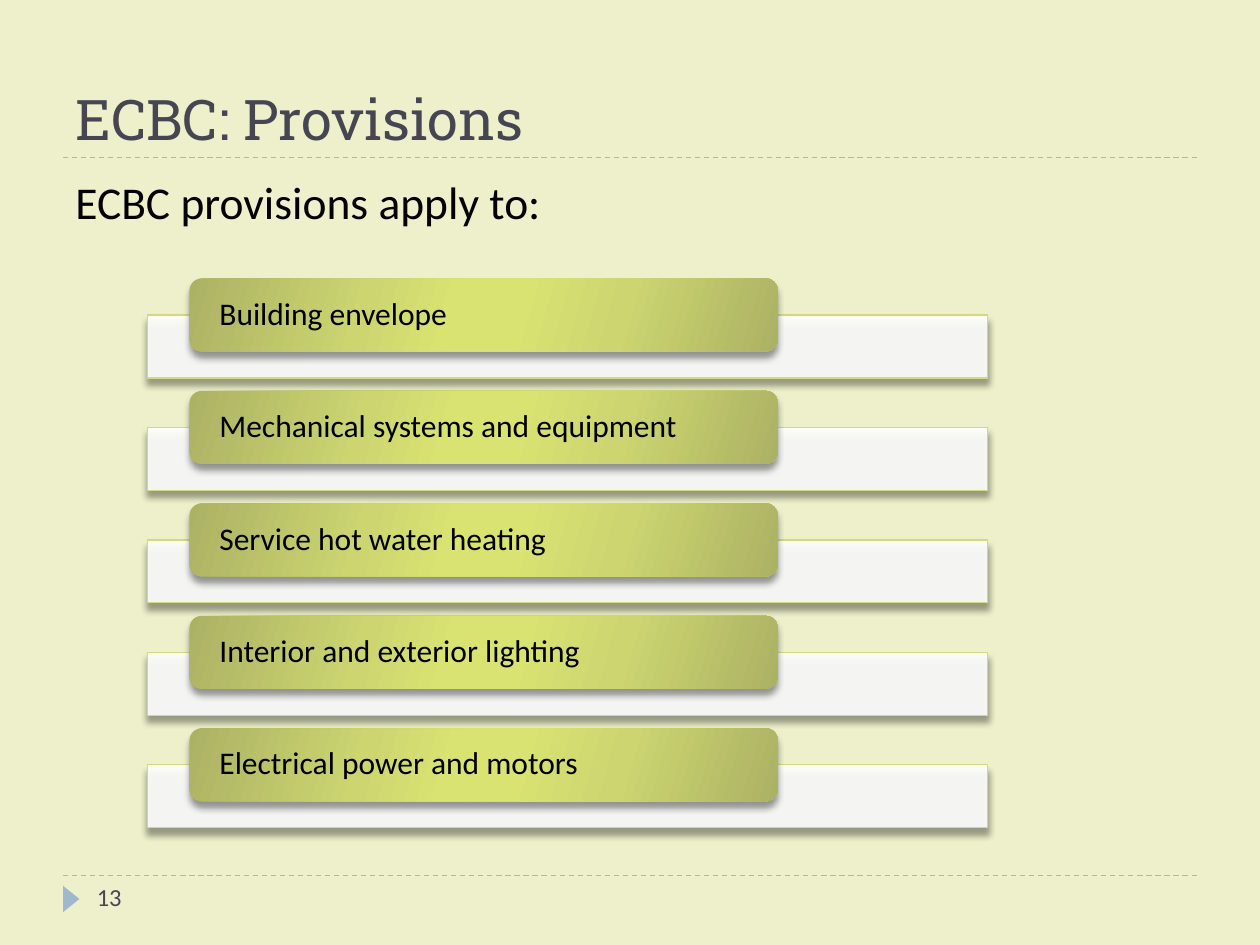
from lxml.etree import SubElement
from pptx import Presentation
from pptx.dml.color import RGBColor
from pptx.enum.dml import MSO_LINE
from pptx.enum.shapes import MSO_CONNECTOR, MSO_SHAPE
from pptx.enum.text import MSO_ANCHOR, PP_ALIGN
from pptx.oxml import parse_xml
from pptx.oxml.ns import nsdecls, qn
from pptx.util import Inches, Pt

COLORS = {
    "background": "EDF0CA", "rule": "9FB8CD", "heading": "464653",
    "text": "000000", "bar": "FFFFFF", "bar_line": "D2DA7A",
    "edge": "ACB264", "mid": "CCD570", "center": "D9E371",
}
PILL_STOPS = [(0, "edge"), (30, "mid"), (45, "center"),
              (55, "center"), (73, "mid"), (100, "edge")]
PROVISIONS = [
    "Building envelope",
    "Mechanical systems and equipment",
    "Service hot water heating",
    "Interior and exterior lighting",
    "Electrical power and motors",
]


def rgb(name):
    """Return the named colour."""
    return RGBColor.from_string(COLORS[name])


def set_text(sp, text, size, color, font="Calibri", anchor=MSO_ANCHOR.TOP):
    """Write one left-aligned paragraph into a shape."""
    tf = sp.text_frame
    tf.word_wrap = True
    tf.vertical_anchor = anchor
    p = tf.paragraphs[0]
    p.text = text
    p.alignment = PP_ALIGN.LEFT
    p.font.name = font
    p.font.size = Pt(size)
    p.font.color.rgb = rgb(color)
    return tf


def add_text(s, left, top, width, height, *args, **kwargs):
    """Add a text box, with its box in inches."""
    sp = s.shapes.add_textbox(Inches(left), Inches(top), Inches(width), Inches(height))
    return set_text(sp, *args, **kwargs)


def add_box(s, kind, left, top, width, height):
    """Add a preset shape without shadow, with its box in inches."""
    sp = s.shapes.add_shape(kind, Inches(left), Inches(top), Inches(width), Inches(height))
    sp.shadow.inherit = False
    return sp


def add_shadow(sp):
    """Give a shape a soft shadow straight below it."""
    effects = sp._element.spPr.find(qn("a:effectLst"))
    effects.append(parse_xml(
        f'<a:outerShdw {nsdecls("a")} blurRad="{Pt(4)}" dist="{Pt(3.4)}" dir="5400000" '
        'rotWithShape="0"><a:srgbClr val="000000"><a:alpha val="40000"/></a:srgbClr>'
        '</a:outerShdw>'))


def set_gradient(sp, stops, angle):
    """Fill a shape with a linear gradient."""
    sp.fill.gradient()
    grad = sp._element.spPr.find(qn("a:gradFill"))
    stop_list = grad.find(qn("a:gsLst"))
    for stop in list(stop_list):
        stop_list.remove(stop)
    for position, name in stops:
        stop = SubElement(stop_list, qn("a:gs"), pos=str(position * 1000))
        SubElement(stop, qn("a:srgbClr"), val=COLORS[name])
    grad.find(qn("a:lin")).set("ang", str(angle * 60000))


def add_rule(s, left, top, width):
    """Draw a dashed horizontal rule."""
    line = s.shapes.add_connector(MSO_CONNECTOR.STRAIGHT, Inches(left), Inches(top),
                                  Inches(left + width), Inches(top))
    line.line.color.rgb = rgb("rule")
    line.line.width = Pt(0.75)
    line.line.dash_style = MSO_LINE.DASH
    SubElement(line._element.spPr, qn("a:effectLst"))


def add_header(s, left, top, width, height):
    """Place the title above its rule."""
    add_text(s, left, top, width, height, "ECBC: Provisions", 32, "heading",
             font="Roboto Slab", anchor=MSO_ANCHOR.BOTTOM)
    add_rule(s, left, top + height, width)


def add_provision(s, left, top, width, height, text):
    """Place a labelled pill over a pale bar."""
    bar_height = 0.5
    bar = add_box(s, MSO_SHAPE.RECTANGLE, left, top + height - bar_height, width, bar_height)
    bar.fill.solid()
    bar.fill.fore_color.rgb = rgb("bar")
    color = bar._element.spPr.find(qn("a:solidFill")).find(qn("a:srgbClr"))
    SubElement(color, qn("a:alpha"), val="90000")
    bar.line.color.rgb = rgb("bar_line")
    bar.line.width = Pt(0.75)
    add_shadow(bar)

    pill = add_box(s, MSO_SHAPE.ROUNDED_RECTANGLE, left + width * 0.05, top, width * 0.7, 0.58)
    set_gradient(pill, PILL_STOPS, 16)
    pill.line.fill.background()
    add_shadow(pill)
    tf = set_text(pill, text, 18, "text", anchor=MSO_ANCHOR.MIDDLE)
    tf.margin_left = tf.margin_right = Inches(0.21)
    tf.margin_top = tf.margin_bottom = Inches(0.03)
    tf.paragraphs[0].line_spacing = 0.9


def add_provisions(s, left, top, width, height):
    """Stack the provisions evenly in the box."""
    row_height = 0.79
    pitch = (height - row_height) / (len(PROVISIONS) - 1)
    for i, text in enumerate(PROVISIONS):
        add_provision(s, left, top + i * pitch, width, row_height, text)


def add_footer(s, left, top, width):
    """Place the rule, the marker and the slide number."""
    add_rule(s, left, top, width)
    marker = add_box(s, MSO_SHAPE.ISOSCELES_TRIANGLE, left - 0.04, top + 0.12, 0.21, 0.13)
    marker.rotation = 90
    marker.fill.solid()
    marker.fill.fore_color.rgb = rgb("rule")
    marker.line.fill.background()
    add_text(s, left + 0.17, top, 2.17, 0.4, "13", 14, "heading")


def main():
    """Build and save the slide."""
    prs = Presentation()
    prs.slide_width, prs.slide_height = Inches(10), Inches(7.5)
    s = prs.slides.add_slide(prs.slide_layouts[6])
    s.background.fill.solid()
    s.background.fill.fore_color.rgb = rgb("background")
    add_header(s, 0.5, 0.17, 9, 1.08)
    add_text(s, 0.5, 1.33, 9, 0.6, "ECBC provisions apply to:", 26, "text")
    add_provisions(s, 1.17, 2.21, 6.67, 4.36)
    add_footer(s, 0.5, 6.95, 9)
    prs.save("out.pptx")


if __name__ == "__main__":
    main()
